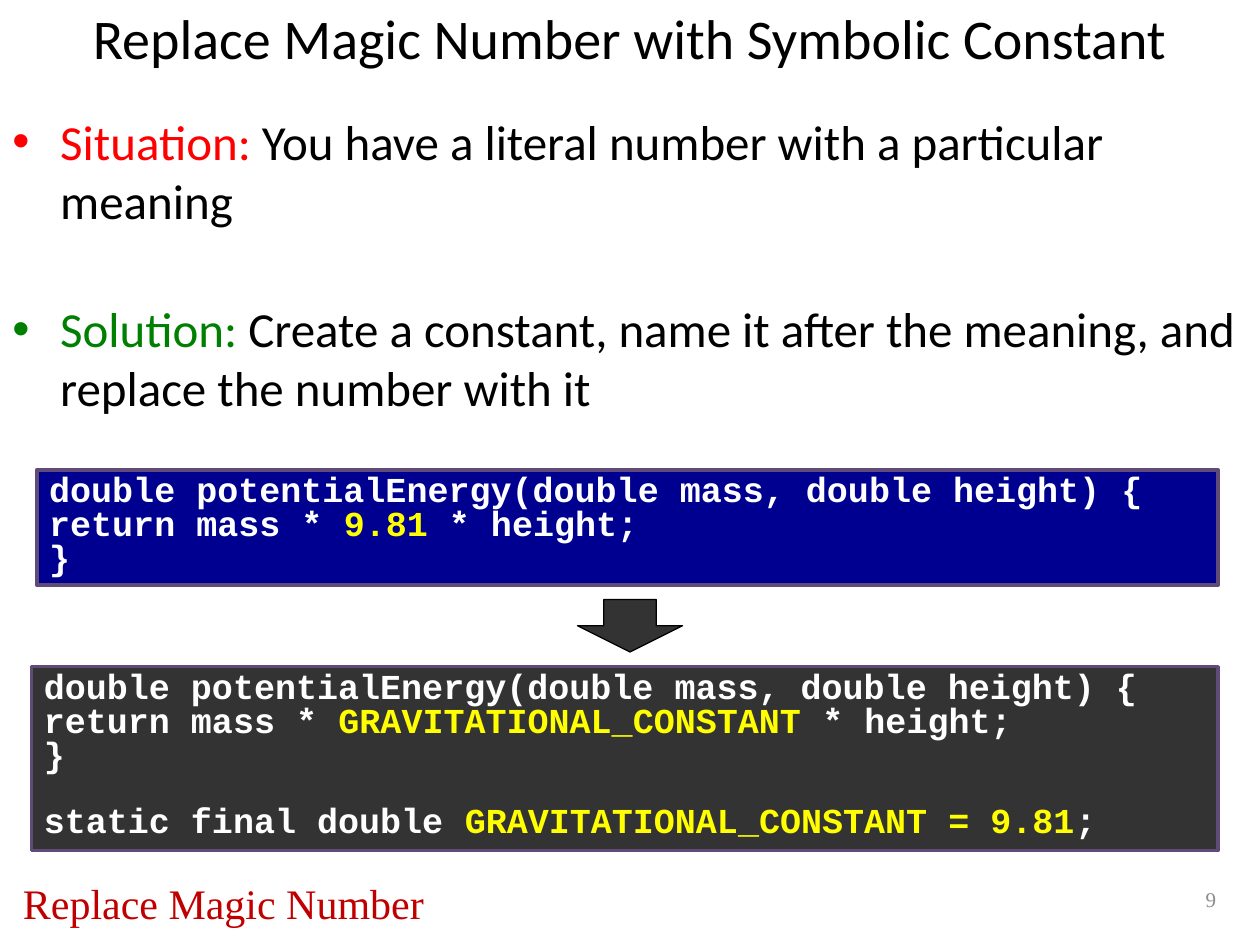
from lxml.etree import SubElement
from pptx import Presentation
from pptx.dml.color import RGBColor
from pptx.enum.shapes import MSO_SHAPE
from pptx.enum.text import MSO_ANCHOR, MSO_AUTO_SIZE, PP_ALIGN
from pptx.oxml.ns import qn
from pptx.util import Inches, Pt

UNIT = Inches(1) / 12  # the slide is 120 columns by 90 rows
BLACK, WHITE, YELLOW = "000000", "FFFFFF", "FFFF00"
RED, GREEN, DARK_RED, GREY = "FF0000", "008000", "C00000", "8C8C8C"
NAVY, CHARCOAL, PURPLE = "000090", "333333", "5F4A78"

SIGNATURE = [("double potentialEnergy(double mass, double height) {", WHITE)]
CLOSING = [("}", WHITE)]


def rgb(value):
    return RGBColor.from_string(value)


def grid(*cells):
    """Turn columns and rows into lengths."""
    return [round(cell * UNIT) for cell in cells]


def add_spans(para, spans, font, size, bold=False):
    for text, color in spans:
        span = para.add_run()
        span.text = text
        span.font.name = font
        span.font.size = Pt(size)
        span.font.bold = bold
        span.font.color.rgb = rgb(color)


def add_paragraphs(frame, lines, font, size, bold=False):
    for number, spans in enumerate(lines):
        para = frame.add_paragraph() if number else frame.paragraphs[0]
        add_spans(para, spans, font, size, bold)
    return frame.paragraphs


def set_title(page, text, place):
    title = page.shapes.title
    title.left, title.top, title.width, title.height = grid(*place)
    frame = title.text_frame
    frame.vertical_anchor = MSO_ANCHOR.MIDDLE
    frame.auto_size = MSO_AUTO_SIZE.NONE
    frame.paragraphs[0].alignment = PP_ALIGN.CENTER
    add_spans(frame.paragraphs[0], [(text, BLACK)], "Calibri", 32)


def add_label(page, text, place, size, color, align=PP_ALIGN.LEFT,
              anchor=MSO_ANCHOR.TOP, wrap=True):
    frame = page.shapes.add_textbox(*grid(*place)).text_frame
    frame.word_wrap = wrap
    frame.vertical_anchor = anchor
    frame.paragraphs[0].alignment = align
    add_spans(frame.paragraphs[0], [(text, color)], "Times New Roman", size)


def add_bullets(page, items, place, gap):
    frame = page.shapes.add_textbox(*grid(*place)).text_frame
    frame.word_wrap = True
    paras = add_paragraphs(frame, items, "Calibri", 28)
    for number, para in enumerate(paras):
        if number:
            para.space_before = Pt(gap)
        properties = para._p.get_or_add_pPr()
        properties.set("marL", str(Inches(0.38)))
        properties.set("indent", str(-Inches(0.38)))
        SubElement(properties, qn("a:buFont")).set("typeface", "Arial")
        SubElement(properties, qn("a:buChar")).set("char", "•")


def add_filled_shape(page, kind, place, fill, line, line_width):
    shape = page.shapes.add_shape(kind, *grid(*place))
    shape.shadow.inherit = False
    shape.fill.solid()
    shape.fill.fore_color.rgb = rgb(fill)
    shape.line.color.rgb = rgb(line)
    shape.line.width = Pt(line_width)
    return shape


def add_code_box(page, lines, place, fill):
    box = add_filled_shape(page, MSO_SHAPE.RECTANGLE, place, fill, PURPLE, 2)
    frame = box.text_frame
    frame.word_wrap = True
    frame.vertical_anchor = MSO_ANCHOR.TOP
    paras = add_paragraphs(frame, lines, "Courier New", 20, bold=True)
    for para in paras:
        para.alignment = PP_ALIGN.LEFT
        para.line_spacing = 0.8
    return paras


def main():
    deck = Presentation()
    deck.slide_width, deck.slide_height = grid(120, 90)
    page = deck.slides.add_slide(deck.slide_layouts[5])

    set_title(page, "Replace Magic Number with Symbolic Constant", (1, 0, 118, 7))
    add_bullets(page, [
        [("Situation:", RED),
         (" You have a literal number with a particular meaning", BLACK)],
        [("Solution:", GREEN),
         (" Create a constant, name it after the meaning, and replace the number with it",
          BLACK)],
    ], (0, 10, 119, 74), gap=40)

    add_code_box(page, [
        SIGNATURE,
        [("return mass * ", WHITE), ("9.81", YELLOW), (" * height;", WHITE)],
        CLOSING,
    ], (3.5, 44.75, 112.5, 11), NAVY)
    after = add_code_box(page, [
        SIGNATURE,
        [("return mass * ", WHITE), ("GRAVITATIONAL_CONSTANT", YELLOW),
         (" * height;", WHITE)],
        CLOSING,
        [("static final double ", WHITE),
         ("GRAVITATIONAL_CONSTANT = 9.81", YELLOW), (";", WHITE)],
    ], (3, 63.5, 113, 17.5), CHARCOAL)
    after[-1].space_before = Pt(19)
    add_filled_shape(page, MSO_SHAPE.DOWN_ARROW, (55, 57.1, 10, 5),
                     CHARCOAL, BLACK, 0.75)

    add_label(page, "Replace Magic Number", (1, 83, 42.6, 6), 24, DARK_RED, wrap=False)
    add_label(page, "9", (89, 83.2, 28, 4.8), 12, GREY,
              PP_ALIGN.RIGHT, MSO_ANCHOR.MIDDLE)
    deck.save("out.pptx")


if __name__ == "__main__":
    main()
